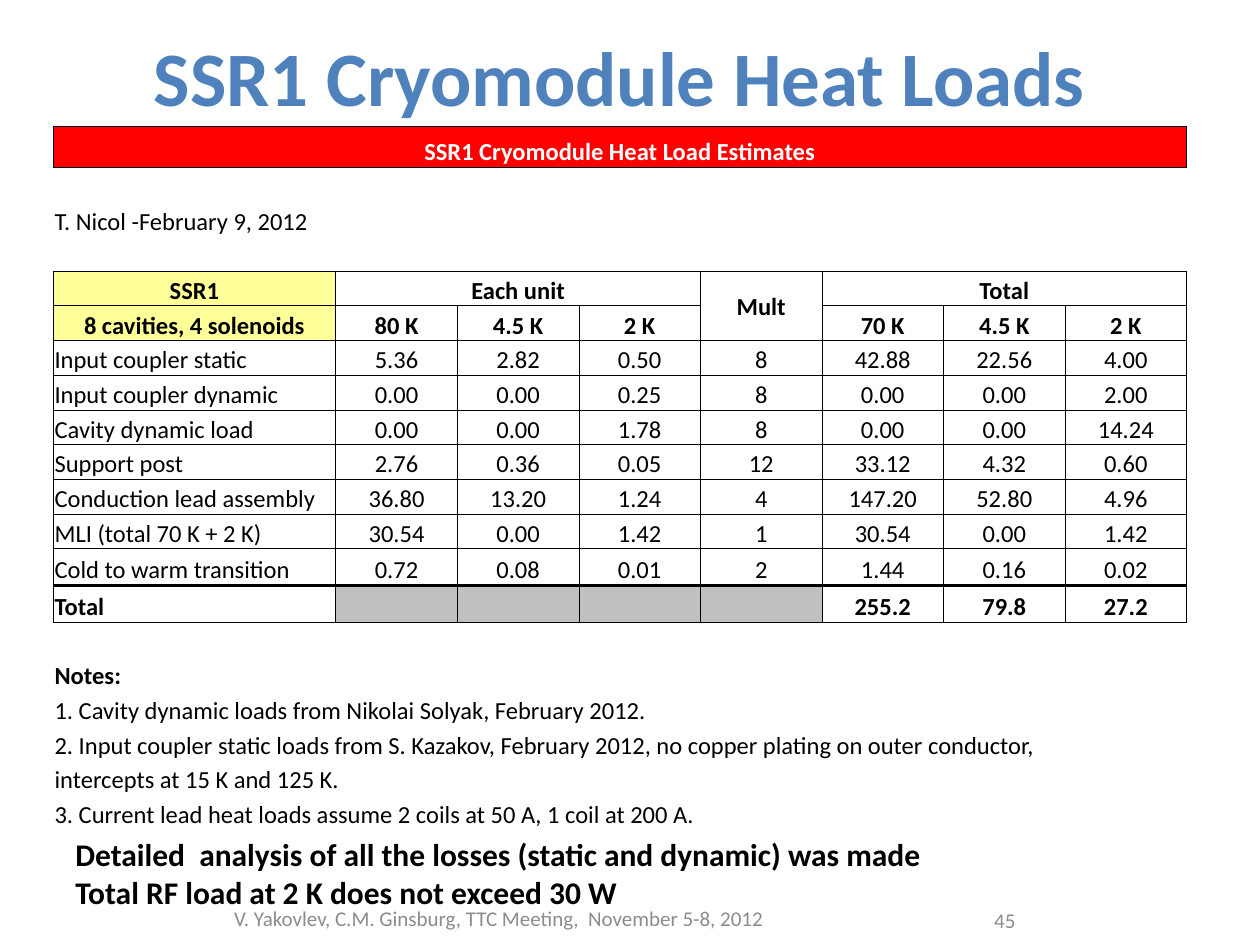
"""Build the SSR1 cryomodule heat load slide."""
from lxml.etree import SubElement
from pptx import Presentation
from pptx.dml.color import RGBColor
from pptx.enum.text import MSO_ANCHOR, PP_ALIGN
from pptx.oxml.ns import qn
from pptx.util import Cm, Pt

BLACK = RGBColor(0x00, 0x00, 0x00)
WHITE = RGBColor(0xFF, 0xFF, 0xFF)
RED = RGBColor(0xFF, 0x00, 0x00)
YELLOW = RGBColor(0xFF, 0xFF, 0x99)
SILVER = RGBColor(0xC0, 0xC0, 0xC0)
BLUE = RGBColor(0x4F, 0x81, 0xBD)
GRAY = RGBColor(0x8C, 0x8C, 0x8C)

FONT = "Calibri"
NO_GRID_STYLE = "{2D5ABB26-0587-4C30-8999-92F81FD0307C}"
LEFT, CENTER, RIGHT = PP_ALIGN.LEFT, PP_ALIGN.CENTER, PP_ALIGN.RIGHT
MIDDLE = MSO_ANCHOR.MIDDLE

TABLE_ROWS = [
    ["SSR1 Cryomodule Heat Load Estimates"],
    [],
    ["T. Nicol -February 9, 2012"],
    [],
    ["SSR1", "Each unit", "", "", "Mult", "Total"],
    ["8 cavities, 4 solenoids", "80 K", "4.5 K", "2 K", "", "70 K", "4.5 K", "2 K"],
    ["Input coupler static", "5.36", "2.82", "0.50", "8", "42.88", "22.56", "4.00"],
    ["Input coupler dynamic", "0.00", "0.00", "0.25", "8", "0.00", "0.00", "2.00"],
    ["Cavity dynamic load", "0.00", "0.00", "1.78", "8", "0.00", "0.00", "14.24"],
    ["Support post", "2.76", "0.36", "0.05", "12", "33.12", "4.32", "0.60"],
    ["Conduction lead assembly", "36.80", "13.20", "1.24", "4", "147.20", "52.80", "4.96"],
    ["MLI (total 70 K + 2 K)", "30.54", "0.00", "1.42", "1", "30.54", "0.00", "1.42"],
    ["Cold to warm transition", "0.72", "0.08", "0.01", "2", "1.44", "0.16", "0.02"],
    ["Total", "", "", "", "", "255.2", "79.8", "27.2"],
    [],
    ["Notes:"],
    ["1. Cavity dynamic loads from Nikolai Solyak, February 2012."],
    ["2. Input coupler static loads from S. Kazakov, February 2012, "
     "no copper plating on outer conductor,"],
    ["intercepts at 15 K and 125 K."],
    ["3. Current lead heat loads assume 2 coils at 50 A, 1 coil at 200 A."],
]
BANNER, HEADER, SUBHEADER, LAST_ITEM, TOTAL, NOTES = 0, 4, 5, 12, 13, 15
BOLD_ROWS = {BANNER, HEADER, SUBHEADER, TOTAL, NOTES}
GRID_ROWS = {BANNER, *range(HEADER, TOTAL + 1)}
MERGES = [
    ((BANNER, 0), (BANNER, 7)), ((HEADER, 1), (HEADER, 3)),
    ((HEADER, 4), (SUBHEADER, 4)), ((HEADER, 5), (HEADER, 7)),
    ((16, 0), (16, 3)), ((17, 0), (17, 6)), ((18, 0), (18, 1)), ((19, 0), (19, 4)),
]
FILLS = {
    (BANNER, 0): RED, (HEADER, 0): YELLOW, (SUBHEADER, 0): YELLOW,
    **{(TOTAL, column): SILVER for column in range(1, 5)},
}
COLUMN_WIDTHS = [5.7] + [2.45] * 7
ROW_HEIGHT = 0.7
ROW_HEIGHTS = {BANNER: 0.83, LAST_ITEM: 0.74, TOTAL: 0.74}

TITLE = (["SSR1 Cryomodule Heat Loads"], (1.07, 0.43, 22.86, 2.21), CENTER, MIDDLE,
         {"size": Pt(44), "bold": True}, BLUE)
TEXTS = [
    (["V. Yakovlev, C.M. Ginsburg, TTC Meeting,  November 5-8, 2012"],
     (1.27, 17.98, 17.58, 1.07), CENTER, MIDDLE, {"size": Pt(12)}, GRAY),
    (["45"], (19.25, 18.03, 1.47, 1.02), RIGHT, MIDDLE, {"size": Pt(12)}, GRAY),
    (["Detailed  analysis of all the losses (static and dynamic) was made",
      "Total RF load at 2 K does not exceed 30 W"],
     (1.27, 16.71, 17.7, 2.57), LEFT, MSO_ANCHOR.TOP, {"size": Pt(18), "bold": True}, BLACK),
]


def write(paragraph, text, alignment, formats, color):
    paragraph.alignment = alignment
    font = paragraph.add_run().font
    paragraph.runs[0].text = text
    for name, value in {"name": FONT, **formats}.items():
        setattr(font, name, value)
    font.color.rgb = color


def add_text(slide, lines, box, alignment, anchor, formats, color):
    frame = slide.shapes.add_textbox(*map(Cm, box)).text_frame
    frame.word_wrap = True
    frame.vertical_anchor = anchor
    for index, line in enumerate(lines):
        paragraph = frame.add_paragraph() if index else frame.paragraphs[0]
        write(paragraph, line, alignment, formats, color)


def add_borders(cell, row, column):
    widths = {"L": 0.5, "R": 0.5, "T": 0.5, "B": 0.5}
    if row == LAST_ITEM:
        widths["B"] = 2
    if row == TOTAL:
        widths["T"] = 2
    if column == 0 and row in (HEADER, SUBHEADER):
        del widths["B" if row == HEADER else "T"]
    properties = cell._tc.get_or_add_tcPr()
    for side, width in widths.items():
        line = SubElement(properties, qn(f"a:ln{side}"), w=str(Pt(width)))
        SubElement(SubElement(line, qn("a:solidFill")), qn("a:srgbClr"), val=str(BLACK))


def fill_cell(cell, row, column, text):
    for side in ("left", "right", "top"):
        setattr(cell, f"margin_{side}", Cm(0.03))
    cell.margin_bottom = 0
    cell.vertical_anchor = MIDDLE if text == "Mult" else MSO_ANCHOR.BOTTOM
    if row in GRID_ROWS:
        add_borders(cell, row, column)
    if (row, column) in FILLS:
        cell.fill.solid()
        cell.fill.fore_color.rgb = FILLS[row, column]
    else:
        cell.fill.background()
    paragraph = cell.text_frame.paragraphs[0]
    if text:
        centered = column > 0 or row in (BANNER, HEADER, SUBHEADER)
        write(paragraph, text, CENTER if centered else LEFT,
              {"size": Pt(14), "bold": row in BOLD_ROWS}, WHITE if row == BANNER else BLACK)
    else:
        SubElement(paragraph._p, qn("a:endParaRPr"), sz="1400")


def add_heat_table(slide):
    heights = [ROW_HEIGHTS.get(row, ROW_HEIGHT) for row in range(len(TABLE_ROWS))]
    table = slide.shapes.add_table(
        len(heights), len(COLUMN_WIDTHS), Cm(1.07), Cm(2.54),
        Cm(sum(COLUMN_WIDTHS)), Cm(sum(heights))).table
    table._tbl.tblPr.find(qn("a:tableStyleId")).text = NO_GRID_STYLE
    table.first_row = table.horz_banding = False
    for column, width in zip(table.columns, COLUMN_WIDTHS):
        column.width = Cm(width)
    for row, (texts, height) in enumerate(zip(TABLE_ROWS, heights)):
        table.rows[row].height = Cm(height)
        for column in range(len(COLUMN_WIDTHS)):
            text = texts[column] if column < len(texts) else ""
            fill_cell(table.cell(row, column), row, column, text)
    for first, last in MERGES:
        table.cell(*first).merge(table.cell(*last))


def main():
    presentation = Presentation()
    presentation.slide_width, presentation.slide_height = Cm(25.4), Cm(19.05)
    slide = presentation.slides.add_slide(presentation.slide_layouts[6])
    add_text(slide, *TITLE)
    add_heat_table(slide)
    for text in TEXTS:
        add_text(slide, *text)
    presentation.save("out.pptx")


if __name__ == "__main__":
    main()
